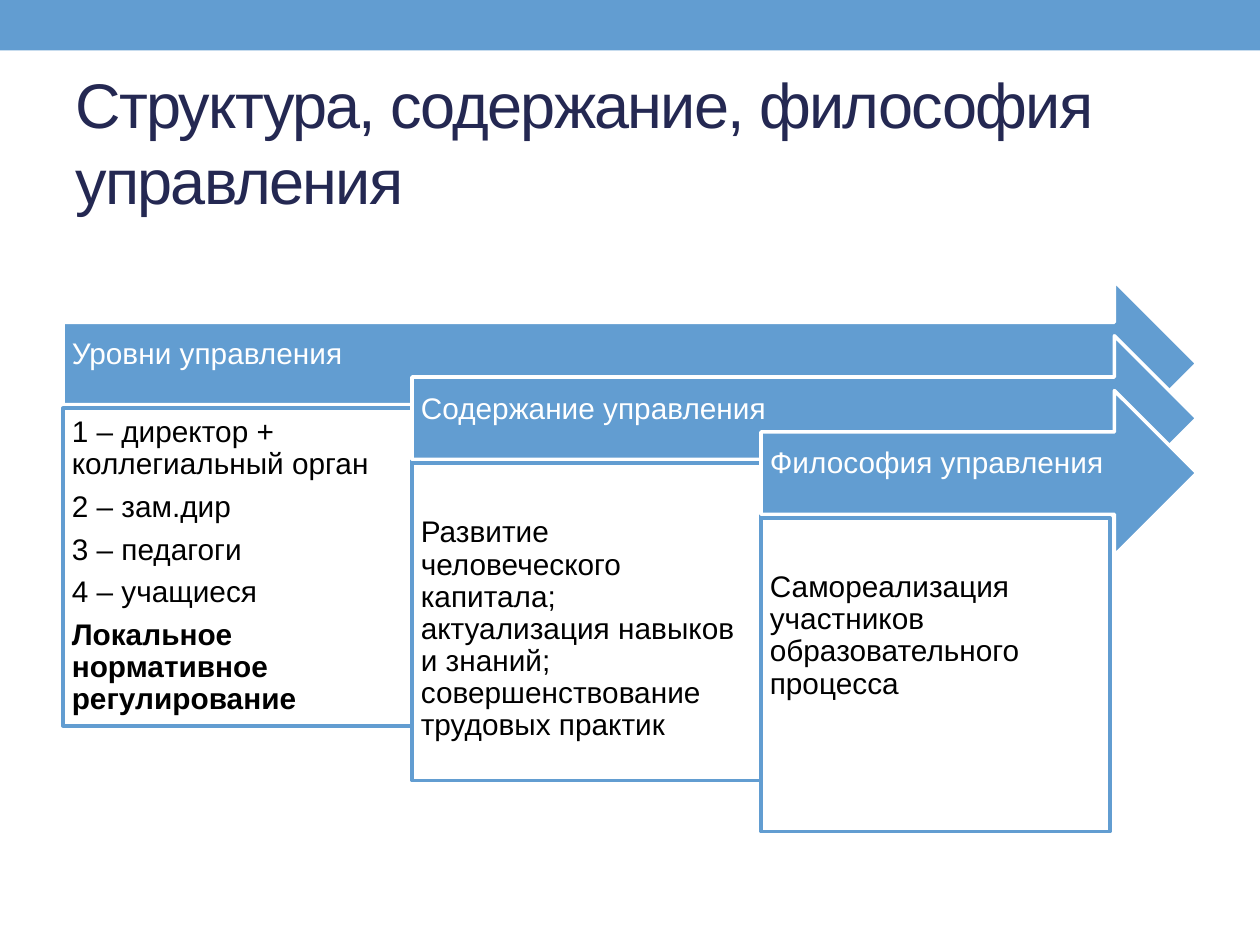
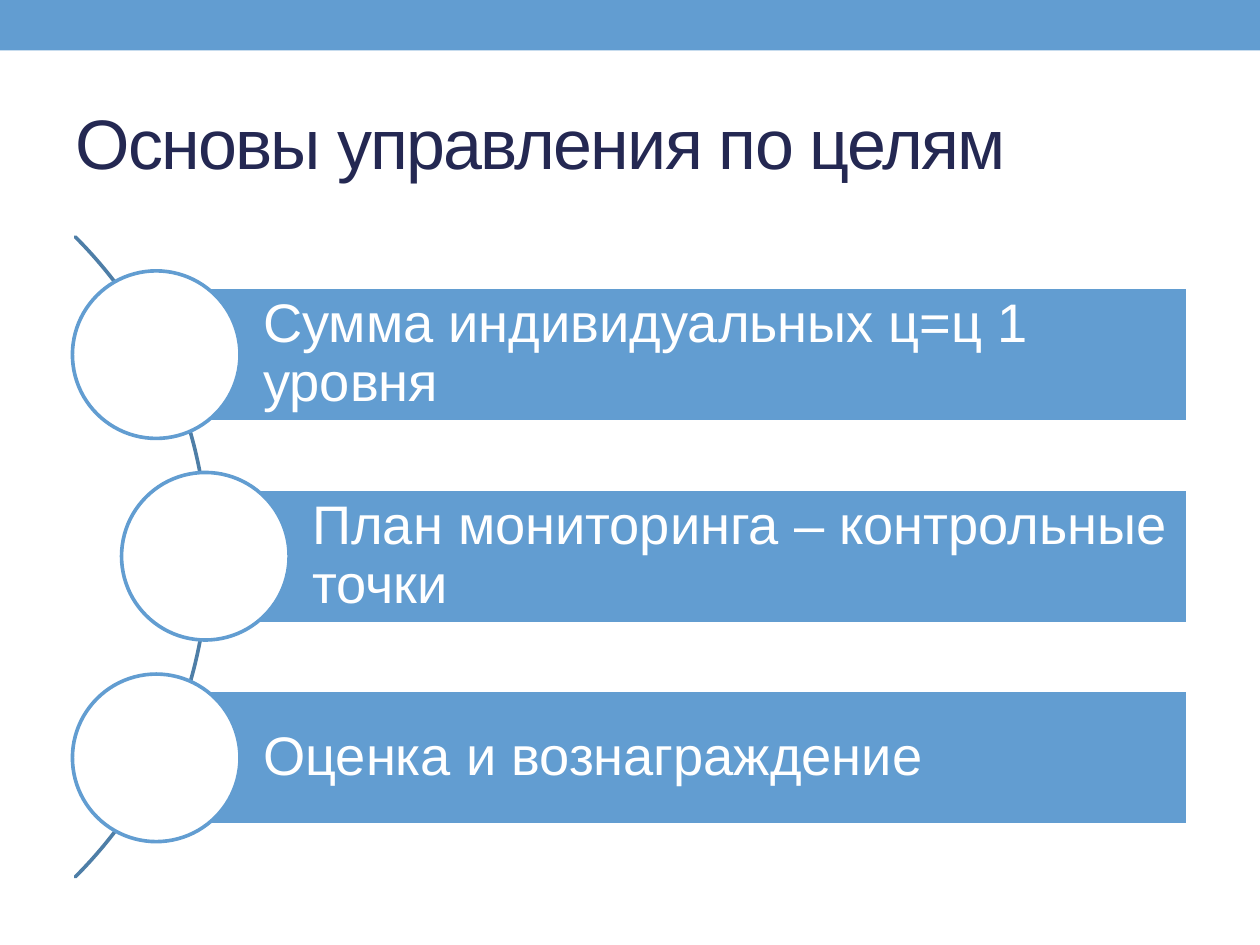
from dataclasses import dataclass

import pptx
import pptx.dml.color
import pptx.enum.shapes
import pptx.enum.text
import pptx.oxml.ns
import pptx.util

MSO_SHAPE = pptx.enum.shapes.MSO_SHAPE
ANCHOR = pptx.enum.text.MSO_ANCHOR

SLIDE_WIDTH = pptx.util.Inches(10)
SLIDE_HEIGHT = pptx.util.Inches(7.5)
COLUMN = SLIDE_WIDTH / 100
ROW = SLIDE_HEIGHT / 75

FONT = "Arial"
BLUE = "629DD1"
ARC_BLUE = "4E7EA7"
NAVY = "242852"
WHITE = "FFFFFF"
BLACK = "000000"
LINE_WIDTH = 2.08
LEFT_EDGE = 5
RIGHT_EDGE = 95


@dataclass(frozen=True)
class Area:
    left: float
    top: float
    width: float
    height: float

    def lengths(self) -> tuple[int, int, int, int]:
        return (round(self.left * COLUMN), round(self.top * ROW),
                round(self.width * COLUMN), round(self.height * ROW))


@dataclass(frozen=True)
class TextStyle:
    size: float
    color: str
    insets: tuple[float, float, float, float]
    anchor: ANCHOR


@dataclass(frozen=True)
class Paragraph:
    text: str
    bold: bool = False


@dataclass(frozen=True)
class Stage:
    heading: str
    paragraphs: tuple[Paragraph, ...]
    text_top: float
    panel_height: float


@dataclass(frozen=True)
class Goal:
    text: str
    bar_left: float


HEADING_STYLE = TextStyle(17, WHITE, (0.7, 0.7, 2.8, 2.1), ANCHOR.MIDDLE)
GOAL_STYLE = TextStyle(31, WHITE, (8.5, 0.9, 0.9, 0.9), ANCHOR.MIDDLE)

STAGES = (
    Stage("Уровни управления", (
        Paragraph("1 – директор + коллегиальный орган"),
        Paragraph("2 – зам.дир"),
        Paragraph("3 – педагоги"),
        Paragraph("4 – учащиеся"),
        Paragraph("Локальное нормативное регулирование", bold=True),
    ), 0.7, 25.2),
    Stage("Содержание управления", (
        Paragraph("Развитие человеческого капитала; актуализация навыков и знаний; "
                  "совершенствование трудовых практик"),
    ), 4.3, 25.2),
    Stage("Философия управления", (
        Paragraph("Самореализация участников образовательного процесса"),
    ), 4.3, 24.9),
)

GOALS = (
    Goal("Сумма индивидуальных ц=ц 1 уровня", 12.4),
    Goal("План мониторинга – контрольные точки", 16.3),
    Goal("Оценка и вознаграждение", 12.4),
)


def color(value: str) -> pptx.dml.color.RGBColor:
    return pptx.dml.color.RGBColor.from_string(value)


def add_shape(slide: pptx.slide.Slide, kind: MSO_SHAPE, area: Area,
              fill: str | None, line: str | None) -> pptx.shapes.autoshape.Shape:
    shape = slide.shapes.add_shape(kind, *area.lengths())
    shape.shadow.inherit = False
    if fill:
        shape.fill.solid()
        shape.fill.fore_color.rgb = color(fill)
    else:
        shape.fill.background()
    if line:
        shape.line.color.rgb = color(line)
        shape.line.width = pptx.util.Pt(LINE_WIDTH)
    else:
        shape.line.fill.background()
    return shape


def add_run(paragraph: pptx.text.text._Paragraph, text: str, size: float,
            value: str, bold: bool = False) -> pptx.text.text._Run:
    run = paragraph.add_run()
    run.text = text
    run.font.name = FONT
    run.font.size = pptx.util.Pt(size)
    run.font.bold = bold
    run.font.color.rgb = color(value)
    return run


def write_text(shape: pptx.shapes.autoshape.Shape, paragraphs: tuple[Paragraph, ...],
               style: TextStyle) -> None:
    frame = shape.text_frame
    frame.word_wrap = True
    frame.vertical_anchor = style.anchor
    left, top, right, bottom = style.insets
    frame.margin_left, frame.margin_right = round(left * COLUMN), round(right * COLUMN)
    frame.margin_top, frame.margin_bottom = round(top * ROW), round(bottom * ROW)
    for index, content in enumerate(paragraphs):
        paragraph = frame.add_paragraph() if index else frame.paragraphs[0]
        paragraph.alignment = pptx.enum.text.PP_ALIGN.LEFT
        paragraph.line_spacing = 0.9
        paragraph.space_after = pptx.util.Pt(style.size * 0.35)
        add_run(paragraph, content.text, style.size, style.color, content.bold)


def prepare_layout(presentation: pptx.presentation.Presentation) -> pptx.slide.SlideLayout:
    layout = presentation.slide_layouts.get_by_name("Title Only")
    title = layout.placeholders[0]
    title.left, title.top, title.width, title.height = Area(LEFT_EDGE, 5.8, 90, 10.8).lengths()
    return layout


def move_band_to_layout(slide: pptx.slide.Slide, layout: pptx.slide.SlideLayout) -> None:
    band = add_shape(slide, MSO_SHAPE.RECTANGLE, Area(0, 0, 100, 4), BLUE, None)
    layout.shapes.element.insert(2, band.element)


def add_titled_slide(presentation: pptx.presentation.Presentation,
                     layout: pptx.slide.SlideLayout, text: str,
                     size: float) -> pptx.slide.Slide:
    slide = presentation.slides.add_slide(layout)
    frame = slide.shapes.title.text_frame
    frame.auto_size = pptx.enum.text.MSO_AUTO_SIZE.NONE
    frame.vertical_anchor = ANCHOR.MIDDLE
    paragraph = frame.paragraphs[0]
    paragraph.alignment = pptx.enum.text.PP_ALIGN.LEFT
    run = add_run(paragraph, text, size, NAVY)
    run.font._element.set("spc", "-100")
    return slide


def draw_stages(slide: pptx.slide.Slide) -> None:
    panel_width = 27.7
    for index, stage in enumerate(STAGES):
        left = LEFT_EDGE + index * panel_width
        top = 22.3 + index * 4.35
        arrow = add_shape(slide, MSO_SHAPE.RIGHT_ARROW,
                          Area(left, top, RIGHT_EDGE - left, 13.1), BLUE, WHITE)
        write_text(arrow, (Paragraph(stage.heading),), HEADING_STYLE)
        panel = add_shape(slide, MSO_SHAPE.RECTANGLE,
                          Area(left, top + 10.1, panel_width, stage.panel_height), WHITE, BLUE)
        panel_style = TextStyle(17, BLACK, (0.7, stage.text_top, 0.7, 0.7), ANCHOR.TOP)
        write_text(panel, stage.paragraphs, panel_style)


def draw_goals(slide: pptx.slide.Slide) -> None:
    arc = add_shape(slide, MSO_SHAPE.BLOCK_ARC, Area(-55.3, 8.3, 71.8, 71.8), None, ARC_BLUE)
    for index, value in enumerate((189, 27, 0)):
        arc.adjustments[index] = value
    bar_right, bar_height, diameter = 94.3, 10.7, 13.3
    for index, goal in enumerate(GOALS):
        top = 22.8 + index * 16
        bar = add_shape(slide, MSO_SHAPE.RECTANGLE,
                        Area(goal.bar_left, top, bar_right - goal.bar_left, bar_height),
                        BLUE, WHITE)
        write_text(bar, (Paragraph(goal.text),), GOAL_STYLE)
        add_shape(slide, MSO_SHAPE.OVAL,
                  Area(goal.bar_left - diameter / 2, top + (bar_height - diameter) / 2,
                       diameter, diameter), WHITE, BLUE)


def main() -> None:
    presentation = pptx.Presentation()
    presentation.slide_width = SLIDE_WIDTH
    presentation.slide_height = SLIDE_HEIGHT
    layout = prepare_layout(presentation)
    structure = add_titled_slide(presentation, layout,
                                 "Структура, содержание, философия управления", 36)
    move_band_to_layout(structure, layout)
    draw_stages(structure)
    goals = add_titled_slide(presentation, layout, "Основы управления по целям", 40)
    draw_goals(goals)
    presentation.save("out.pptx")


if __name__ == "__main__":
    main()
